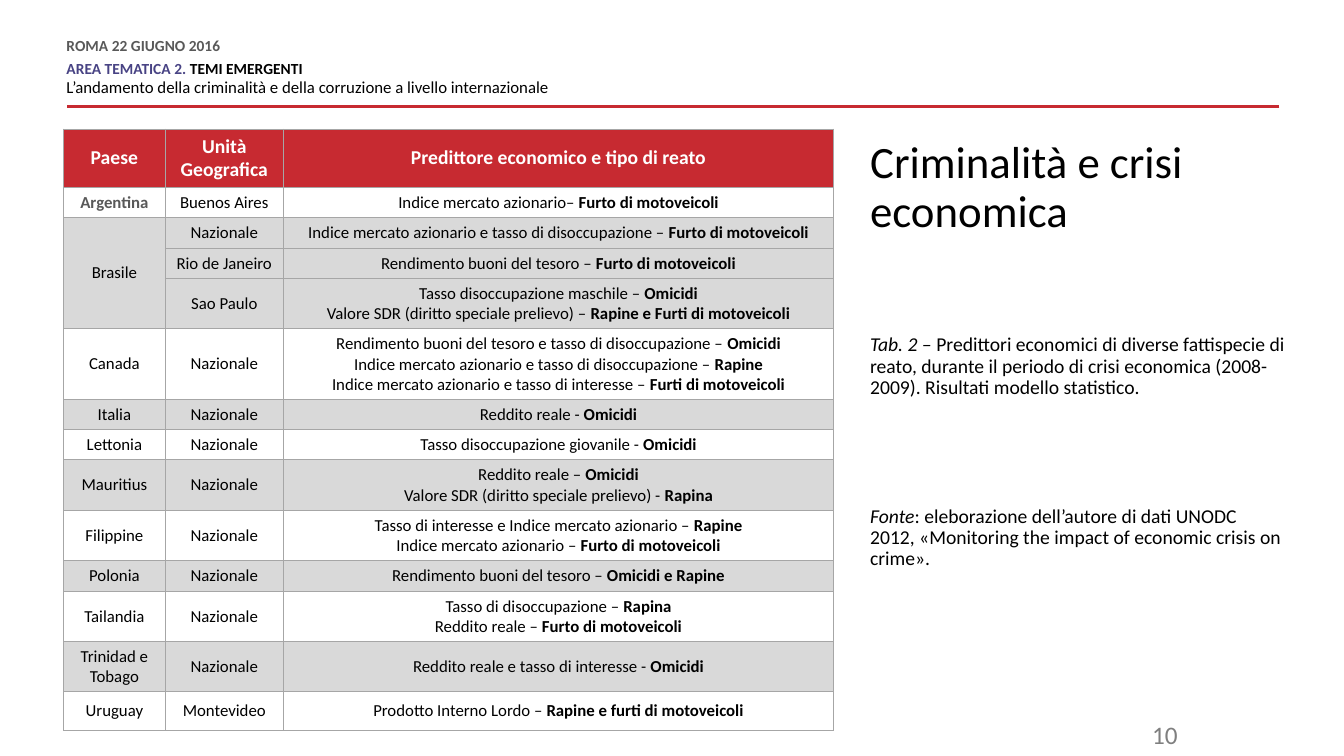
from lxml import etree
from pptx import Presentation
from pptx.dml.color import RGBColor
from pptx.enum.shapes import MSO_CONNECTOR
from pptx.enum.text import MSO_ANCHOR, PP_ALIGN
from pptx.oxml.ns import qn
from pptx.util import Inches, Pt

STRAIGHT = MSO_CONNECTOR.STRAIGHT
MIDDLE = MSO_ANCHOR.MIDDLE
CENTER, RIGHT = PP_ALIGN.CENTER, PP_ALIGN.RIGHT
COLORS = {
    "red": "C72A31", "violet": "484384", "black": "000000", "white": "FFFFFF",
    "dark": "595959", "page": "7F7F7F", "band": "D9D9D9", "border": "A6A6A6",
}


def add_run(paragraph, text, size, color="black", bold=False, italic=False):
    run = paragraph.add_run()
    run.text = text
    font_format = {"name": "Calibri", "size": Pt(size), "bold": bold, "italic": italic}
    for attribute, value in font_format.items():
        setattr(run.font, attribute, value)
    run.font.color.rgb = RGBColor.from_string(COLORS[color])


def style_cell(cell, fill):
    """Centre the cell vertically, fill it and draw thin borders on all sides."""
    cell.vertical_anchor = MIDDLE
    properties = cell._tc.get_or_add_tcPr()
    for side in ("a:lnL", "a:lnR", "a:lnT", "a:lnB"):
        border = etree.SubElement(properties, qn(side), w=str(Pt(0.75)))
        solid = etree.SubElement(border, qn("a:solidFill"))
        etree.SubElement(solid, qn("a:srgbClr"), val=COLORS["border"])
    cell.fill.solid()
    cell.fill.fore_color.rgb = RGBColor.from_string(COLORS[fill])


prs = Presentation()
prs.slide_width, prs.slide_height = Inches(13.33), Inches(7.5)
slide = prs.slides.add_slide(prs.slide_layouts[6])

# Heading and rule
rule = slide.shapes.add_connector(
    STRAIGHT, Inches(12.69), Inches(1.06), Inches(0.66), Inches(1.06))
rule.line.color.rgb = RGBColor.from_string(COLORS["red"])
rule.line.width = Pt(2)
etree.SubElement(rule._element.spPr, qn("a:effectLst"))

# Text blocks: box, margin, then paragraphs as (format, runs)
text_blocks = [
    ((0.66, 0.39, 8.34, 0.59), 0, [
        ({"line_spacing": Pt(10.8), "space_after": Pt(6)},
         [("ROMA 22 GIUGNO 2016", 11, "dark", True)]),
        ({"line_spacing": Pt(10.8)},
         [("AREA TEMATICA 2. ", 11, "violet", True),
          ("TEMI EMERGENTI", 11, "black", True)]),
        ({"line_spacing": Pt(10.8), "space_before": Pt(3), "space_after": Pt(6)},
         [("L’andamento della criminalità e della corruzione a livello internazionale", 12)]),
    ]),
    ((8.63, 1.39, 4.12, 1.13), 0, [
        ({"line_spacing": 0.9}, [("Criminalità e crisi economica", 32)]),
        ({"line_spacing": 0.9, "space_before": Pt(70)},
         [("Tab. 2 – ", 14, "black", False, True),
          ("Predittori economici di diverse fattispecie di reato, durante il periodo "
           "di crisi economica (2008-2009). Risultati modello statistico.", 14)]),
        ({"line_spacing": 0.9, "space_before": Pt(77)},
         [("Fonte", 14, "black", False, True),
          (": eleborazione dell’autore di dati UNODC 2012, «Monitoring the impact "
           "of economic crisis on crime».", 14)]),
    ]),
    ((8.78, 7.09, 3, 0.4), None, [({"alignment": RIGHT}, [("10", 18, "page")])]),
]
for box, margin, paragraphs in text_blocks:
    frame = slide.shapes.add_textbox(*map(Inches, box)).text_frame
    frame.word_wrap = True
    if margin is not None:
        for side in ("left", "top", "right", "bottom"):
            setattr(frame, f"margin_{side}", Inches(margin))
    for index, (paragraph_format, runs) in enumerate(paragraphs):
        paragraph = frame.add_paragraph() if index else frame.paragraphs[0]
        for attribute, value in paragraph_format.items():
            setattr(paragraph, attribute, value)
        for run in runs:
            add_run(paragraph, *run)

# Table: each country with its areas, each area with (predictor, crime) lines
headings = ["Paese", "Unità Geografica", "Predittore economico e tipo di reato"]
countries = [
    ("Argentina", [
        ("Buenos Aires", [("Indice mercato azionario– ", "Furto di motoveicoli")])]),
    ("Brasile", [
        ("Nazionale", [("Indice mercato azionario e tasso di disoccupazione – ",
                        "Furto di motoveicoli")]),
        ("Rio de Janeiro", [("Rendimento buoni del tesoro – ", "Furto di motoveicoli")]),
        ("Sao Paulo", [("Tasso disoccupazione maschile – ", "Omicidi"),
                       ("Valore SDR (diritto speciale prelievo) – ",
                        "Rapine e Furti di motoveicoli")])]),
    ("Canada", [
        ("Nazionale", [
            ("Rendimento buoni del tesoro e tasso di disoccupazione – ", "Omicidi"),
            ("Indice mercato azionario e tasso di disoccupazione – ", "Rapine"),
            ("Indice mercato azionario e tasso di interesse – ", "Furti di motoveicoli")])]),
    ("Italia", [("Nazionale", [("Reddito reale - ", "Omicidi")])]),
    ("Lettonia", [("Nazionale", [("Tasso disoccupazione giovanile - ", "Omicidi")])]),
    ("Mauritius", [
        ("Nazionale", [("Reddito reale – ", "Omicidi"),
                       ("Valore SDR (diritto speciale prelievo) - ", "Rapina")])]),
    ("Filippine", [
        ("Nazionale", [("Tasso di interesse e Indice mercato azionario – ", "Rapine"),
                       ("Indice mercato azionario – ", "Furto di motoveicoli")])]),
    ("Polonia", [("Nazionale", [("Rendimento buoni del tesoro – ", "Omicidi e Rapine")])]),
    ("Tailandia", [
        ("Nazionale", [("Tasso di disoccupazione – ", "Rapina"),
                       ("Reddito reale – ", "Furto di motoveicoli")])]),
    ("Trinidad e Tobago", [
        ("Nazionale", [("Reddito reale e tasso di interesse - ", "Omicidi")])]),
    ("Uruguay", [
        ("Montevideo", [("Prodotto Interno Lordo – ", "Rapine e furti di motoveicoli")])]),
]
row_count = 1 + sum(len(areas) for _, areas in countries)
predictors = slide.shapes.add_table(
    row_count, len(headings), Inches(0.63), Inches(1.28), Inches(7.64), Inches(5.95)).table
predictors.first_row = predictors.horz_banding = False
for column, width in zip(predictors.columns, (1.01, 1.17, 5.46)):
    column.width = Inches(width)

predictors.rows[0].height = Inches(0.58)
for column, heading in enumerate(headings):
    cell = predictors.cell(0, column)
    style_cell(cell, "red")
    cell.text_frame.paragraphs[0].alignment = CENTER
    add_run(cell.text_frame.paragraphs[0], heading, 14, "white", True)

row = 1
for number, (country, areas) in enumerate(countries):
    first_row = row
    for area, findings in areas:
        predictors.rows[row].height = Inches(0.1 + 0.2 * len(findings))
        for column in range(len(headings)):
            style_cell(predictors.cell(row, column), "band" if number % 2 else "white")
        area_paragraph = predictors.cell(row, 1).text_frame.paragraphs[0]
        area_paragraph.alignment = CENTER
        add_run(area_paragraph, area, 12)
        frame = predictors.cell(row, 2).text_frame
        for index, (predictor, crime) in enumerate(findings):
            paragraph = frame.add_paragraph() if index else frame.paragraphs[0]
            paragraph.alignment = CENTER
            add_run(paragraph, predictor, 12)
            add_run(paragraph, crime, 12, bold=True)
        row += 1
    country_cell = predictors.cell(first_row, 0)
    if len(areas) > 1:
        country_cell.merge(predictors.cell(row - 1, 0))
    country_paragraph = country_cell.text_frame.paragraphs[0]
    country_paragraph.alignment = CENTER
    highlighted = country == "Argentina"
    add_run(country_paragraph, country, 12, "dark" if highlighted else "black", highlighted)
predictors.rows[row_count - 2].height = Inches(0.5)
predictors.rows[row_count - 1].height = Inches(0.38)

prs.save("out.pptx")
